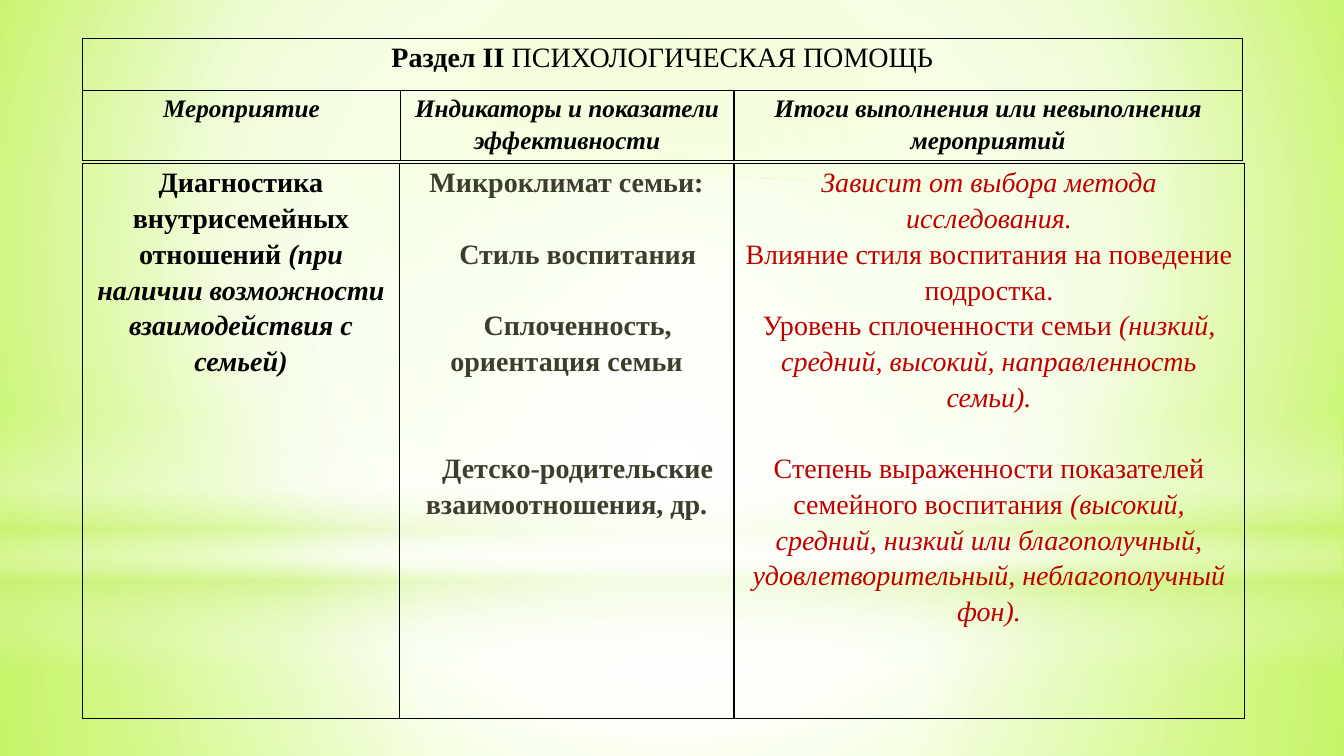
from typing import NamedTuple

from lxml.etree import SubElement
from pptx import Presentation
from pptx.dml.color import RGBColor
from pptx.enum.shapes import MSO_SHAPE
from pptx.enum.text import PP_ALIGN
from pptx.oxml import parse_xml
from pptx.oxml.ns import nsdecls, qn
from pptx.util import Emu, Pt

SCALE = 9144
WIDE, HIGH = 1333, 750
FONT = "Times New Roman"
BLACK, OLIVE, RED = "000000", "3E3D2D", "C00000"
LINE = 25.5


class Stop(NamedTuple):
    at: int
    color: str
    alpha: int = 100


class Blend(NamedTuple):
    stops: list[Stop]
    focus: tuple[int, ...] = ()


class Layer(NamedTuple):
    kind: MSO_SHAPE
    top: int
    high: int
    blend: Blend


class Bit(NamedTuple):
    text: str
    bold: bool = False
    slant: bool = False


class Para(NamedTuple):
    bits: list[Bit]
    dent: int = 0
    skip: int = 0


class Cell(NamedTuple):
    paras: list[Para]
    color: str = BLACK
    size: int = 20
    span: int = 1


class Grid(NamedTuple):
    top: int
    cols: list[int]
    rows: list[int]
    cells: list[list[Cell]]


def px(size: int) -> Emu:
    """Turn px into EMU."""
    return Emu(size * SCALE)


def rgb(color: str) -> RGBColor:
    """Turn a hex string into a colour."""
    return RGBColor.from_string(color)


def paint(owner, fill, blend: Blend) -> None:
    """Fill the owner with a radial or downward blend."""
    fill.gradient()
    grad = owner.element.find(".//" + qn("a:gradFill"))
    for child in list(grad):
        grad.remove(child)
    stops = SubElement(grad, qn("a:gsLst"))
    for stop in blend.stops:
        mark = SubElement(stops, qn("a:gs"), pos=str(stop.at * 1000))
        tone = SubElement(mark, qn("a:srgbClr"), val=stop.color)
        SubElement(tone, qn("a:alpha"), val=str(stop.alpha * 1000))
    if blend.focus:
        way = SubElement(grad, qn("a:path"))
        way.set("path", "circle")
        sides = {side: str(inset * 1000) for side, inset in zip("ltrb", blend.focus)}
        SubElement(way, qn("a:fillToRect"), sides)
    else:
        SubElement(grad, qn("a:lin"), ang="5400000", scaled="0")


def add_layer(slide, layer: Layer) -> None:
    """Draw one full-width band of light."""
    shape = slide.shapes.add_shape(layer.kind, 0, px(layer.top), px(WIDE), px(layer.high))
    shape.shadow.inherit = False
    shape.line.fill.background()
    paint(shape, shape.fill, layer.blend)


def frame(box) -> None:
    """Give a table cell no fill, thin borders and side margins."""
    box.fill.background()
    box.margin_left = box.margin_right = px(7)
    box.margin_top = box.margin_bottom = 0
    props = box._tc.get_or_add_tcPr()
    for spot, side in enumerate("LRTB"):
        props.insert(spot, parse_xml(
            f'<a:ln{side} {nsdecls("a")} w="12700"><a:solidFill>'
            f'<a:srgbClr val="{BLACK}"/></a:solidFill></a:ln{side}>'))


def write(box, cell: Cell) -> None:
    """Write the paragraphs of a cell."""
    body = box.text_frame
    body.text = "\n".join(para.bits[0].text for para in cell.paras)
    for line, para in zip(body.paragraphs, cell.paras):
        line.alignment = PP_ALIGN.CENTER
        line.line_spacing = 1.15
        line.space_before = Pt(para.skip * LINE)
        if para.dent:
            props = line._p.get_or_add_pPr()
            props.set("marL", "0")
            props.set("indent", str(px(para.dent)))
        for bit in para.bits[1:]:
            line.add_run().text = bit.text
        for run, bit in zip(line.runs, para.bits):
            font = run.font
            font.name, font.size = FONT, Pt(cell.size)
            font.bold, font.italic = bit.bold, bit.slant
            font.color.rgb = rgb(cell.color)


def add_grid(slide, grid: Grid) -> None:
    """Draw a table with its cells."""
    table = slide.shapes.add_table(
        len(grid.rows), len(grid.cols), px(82), px(grid.top),
        px(sum(grid.cols)), px(sum(grid.rows))).table
    table.first_row = table.horz_banding = False
    for col, wide in zip(table.columns, grid.cols):
        col.width = px(wide)
    for row, high in zip(table.rows, grid.rows):
        row.height = px(high)
    for box in table.iter_cells():
        frame(box)
    for row, cells in enumerate(grid.cells):
        for col, cell in enumerate(cells):
            box = table.cell(row, col)
            if cell.span > 1:
                box.merge(table.cell(row, col + cell.span - 1))
            write(box, cell)


def head(text: str) -> Cell:
    """Make a column heading."""
    return Cell([Para([Bit(text, True, True)])], size=18)


def topic(text: str, dent: int = 22, skip: int = 0) -> Para:
    """Make a bold indicator line."""
    return Para([Bit(text, True)], dent, skip)


MID = (50, 50, 50, 50)
BACK = Blend([Stop(0, "CAFF60"), Stop(60, "F7FFE7"), Stop(100, "B7FF29")], (20, 10, 20, 60))
LAYERS = [
    Layer(MSO_SHAPE.RECTANGLE, 558, 192, Blend(
        [Stop(0, "FFFFFF", 91), Stop(37, "FFFFFF", 76), Stop(100, "CAF278", 79)], MID)),
    Layer(MSO_SHAPE.RECTANGLE, 0, 558, Blend(
        [Stop(0, "FFFFFF", 89), Stop(48, "FFFFFF", 62), Stop(100, "CAF278", 79)], MID)),
    Layer(MSO_SHAPE.RECTANGLE, 412, 250, Blend(
        [Stop(0, "FFFFFF", 0), Stop(29, "FFFFFF", 30), Stop(45, "CAF278", 40),
         Stop(55, "FFFFFF", 26), Stop(65, "CAF278", 60), Stop(100, "FFFFFF", 0)])),
    Layer(MSO_SHAPE.OVAL, 175, 558, Blend(
        [Stop(0, "FFFFFF"), Stop(56, "FFFFFF", 0)], MID)),
]
GRIDS = [
    Grid(162, [314, 332, 506], [551], [[
        Cell([Para([
            Bit("Диагностика внутрисемейных отношений ", True),
            Bit("(при наличии возможности взаимодействия с семьей)", True, True)])]),
        Cell([
            topic("Микроклимат семьи:", dent=0),
            topic("Стиль воспитания", skip=1),
            topic("Сплоченность, ориентация семьи", skip=1),
            topic("Детско-родительские взаимоотношения, др.", skip=2)], OLIVE),
        Cell([
            Para([Bit("Зависит от выбора метода исследования.", slant=True)]),
            Para([Bit("Влияние стиля воспитания на поведение подростка.")]),
            Para([Bit("Уровень сплоченности семьи "),
                  Bit("(низкий, средний, высокий, направленность семьи).", slant=True)]),
            Para([Bit("Степень выраженности показателей семейного воспитания "),
                  Bit("(высокий, средний, низкий или благополучный, "
                      "удовлетворительный, неблагополучный фон).", slant=True)], skip=1)], RED),
    ]]),
    Grid(38, [315, 331, 504], [52, 69], [
        [Cell([Para([Bit("Раздел II ", True), Bit("ПСИХОЛОГИЧЕСКАЯ ПОМОЩЬ")])], span=3)],
        [head("Мероприятие"),
         head("Индикаторы и показатели эффективности"),
         head("Итоги выполнения или невыполнения мероприятий")],
    ]),
]


def main() -> None:
    """Build and save the slide."""
    deck = Presentation()
    deck.slide_width, deck.slide_height = px(WIDE), px(HIGH)
    slide = deck.slides.add_slide(deck.slide_layouts[6])
    paint(slide, slide.background.fill, BACK)
    for layer in LAYERS:
        add_layer(slide, layer)
    for grid in GRIDS:
        add_grid(slide, grid)
    deck.save("out.pptx")


if __name__ == "__main__":
    main()
